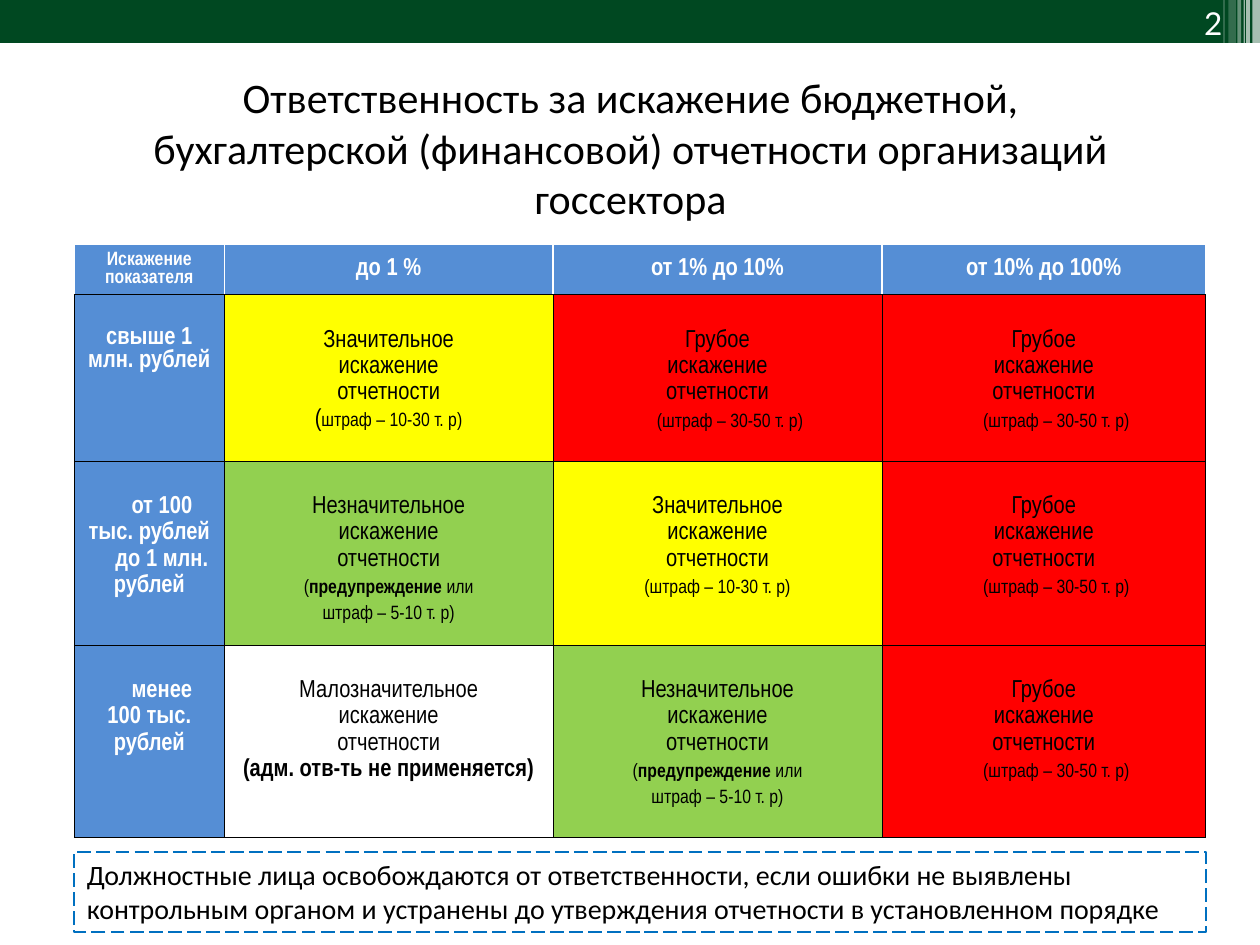
from dataclasses import dataclass

from lxml.etree import SubElement
from pptx import Presentation
from pptx.dml.color import RGBColor
from pptx.enum.dml import MSO_LINE
from pptx.enum.shapes import MSO_SHAPE
from pptx.enum.text import MSO_ANCHOR, MSO_AUTO_SIZE, PP_ALIGN
from pptx.oxml.ns import qn
from pptx.util import Inches, Pt


@dataclass(frozen=True)
class Theme:
    band: str = "004821"
    header: str = "558ED5"
    white: str = "FFFFFF"
    black: str = "000000"
    yellow: str = "FFFF00"
    red: str = "FF0000"
    green: str = "92D050"
    note_line: str = "0070C0"
    table_font: str = "Arial Narrow"
    text_font: str = "Calibri"
    number_font: str = "Lato"
    title_size: int = 24
    number_size: int = 18
    note_size: int = 16
    cell_size: int = 14
    small_size: int = 11
    cell_leading: int = 15


THEME = Theme()
BIG, SMALL = THEME.cell_size, THEME.small_size

# left, width, height, opacity in percent
STRIPES = [
    (9.94, 0.06, 0.34, 65),
    (9.89, 0.03, 0.34, 65),
    (9.87, 0.01, 0.34, 60),
    (9.82, 0.03, 0.34, 40),
    (9.75, 0.06, 0.36, 20),
    (9.71, 0.01, 0.36, 30),
]

COLUMN_WIDTHS = [1.19, 2.61, 2.61, 2.57]
ROW_HEIGHTS = [0.4, 1.32, 1.46, 1.53]
HEADERS = [["Искажение", "показателя"], ["до 1 %"], ["от 1% до 10%"], ["от 10% до 100%"]]

# Each verdict: word, fill, penalty indent, penalty lines of (text, size, bold)
GROSS = ("Грубое", THEME.red, 0.2, [[("(штраф – 30-50 т. р)", SMALL, False)]])
MAJOR = ("Значительное", THEME.yellow, 0, [[("(штраф – 10-30 т. р)", SMALL, False)]])
MAJOR_OVER_MILLION = (
    "Значительное", THEME.yellow, 0,
    [[("(", BIG, False), ("штраф – 10-30 т. р)", SMALL, False)]],
)
MINOR = (
    "Незначительное", THEME.green, 0,
    [
        [("(", SMALL, False), ("предупреждение", SMALL, True), (" или", SMALL, False)],
        [("штраф – 5-10 т. р)", SMALL, False)],
    ],
)
TRIVIAL = ("Малозначительное", THEME.white, 0, [[("(адм. отв-ть не применяется)", BIG, True)]])

# Row label lines, label indent, label leading, verdicts
ROWS = [
    (["свыше 1 млн. рублей"], 0, None, [MAJOR_OVER_MILLION, GROSS, GROSS]),
    (["от 100 тыс. рублей", "до 1 млн. рублей"], 0.2, THEME.cell_leading, [MINOR, MAJOR, GROSS]),
    (["менее 100 тыс. рублей"], 0.2, THEME.cell_leading, [TRIVIAL, MINOR, GROSS]),
]


def rgb(color):
    return RGBColor.from_string(color)


def style_font(font, name, size, color, bold=False):
    font.name = name
    font.size = Pt(size)
    font.bold = bold
    font.color.rgb = rgb(color)


def add_bar(page, left, width, height, color, opacity=100):
    bar = page.shapes.add_shape(
        MSO_SHAPE.RECTANGLE, Inches(left), 0, Inches(width), Inches(height)
    )
    bar.shadow.inherit = False
    bar.line.fill.background()
    bar.fill.solid()
    bar.fill.fore_color.rgb = rgb(color)
    if opacity < 100:
        tint = bar.fill._xPr.find(qn("a:solidFill"))[0]
        SubElement(tint, qn("a:alpha"), val=str(opacity * 1000))


def add_page_number(page):
    box = page.shapes.add_textbox(Inches(8.9), 0, Inches(0.9), Inches(0.37))
    frame = box.text_frame
    frame.word_wrap = True
    frame.vertical_anchor = MSO_ANCHOR.MIDDLE
    para = frame.paragraphs[0]
    para.text = "2"
    para.alignment = PP_ALIGN.RIGHT
    style_font(para.font, THEME.number_font, THEME.number_size, THEME.white)


def fill_title(page):
    title = page.shapes.title
    title.left, title.top = Inches(0.91), Inches(0.52)
    title.width, title.height = Inches(8.19), Inches(1.31)
    frame = title.text_frame
    frame.auto_size = MSO_AUTO_SIZE.NONE
    frame.vertical_anchor = MSO_ANCHOR.TOP
    para = frame.paragraphs[0]
    para.text = (
        "Ответственность за искажение бюджетной, бухгалтерской (финансовой) "
        "отчетности организаций госсектора"
    )
    para.alignment = PP_ALIGN.CENTER
    style_font(para.font, THEME.text_font, THEME.title_size, THEME.black)


def set_borders(cell, is_header):
    properties = cell._tc.get_or_add_tcPr()
    for side in "LRTB":
        white = is_header and side != "B"
        width = Pt(1) if white else Pt(0.5)
        line = SubElement(properties, qn(f"a:ln{side}"), w=str(width))
        paint = SubElement(line, qn("a:solidFill"))
        SubElement(paint, qn("a:srgbClr"), val=THEME.white if white else THEME.black)


def format_cell(cell, fill, is_header=False):
    """Set borders before the fill, in the order the schema requires."""
    set_borders(cell, is_header)
    cell.fill.solid()
    cell.fill.fore_color.rgb = rgb(fill)
    side, top, bottom = (0, 0, 0) if is_header else (0.1, 0.25, 0.04)
    cell.margin_left = cell.margin_right = Inches(side)
    cell.margin_top, cell.margin_bottom = Inches(top), Inches(bottom)
    cell.vertical_anchor = MSO_ANCHOR.MIDDLE if is_header else MSO_ANCHOR.TOP


def add_line(cell, index, spans, color, indent=0, leading=None):
    frame = cell.text_frame
    para = frame.add_paragraph() if index else frame.paragraphs[0]
    para.alignment = PP_ALIGN.CENTER
    if leading:
        para.line_spacing = Pt(leading)
    if indent:
        para._p.get_or_add_pPr().set("indent", str(Inches(indent)))
    for text, size, bold in spans:
        span = para.add_run()
        span.text = text
        style_font(span.font, THEME.table_font, size, color, bold)


def fill_label(cell, lines, size=BIG, indent=0, leading=None, is_header=False):
    format_cell(cell, THEME.header, is_header)
    for index, text in enumerate(lines):
        add_line(cell, index, [(text, size, True)], THEME.white, indent, leading)


def fill_verdict(cell, verdict):
    word, fill, indent, penalty = verdict
    format_cell(cell, fill)
    lines = [[(text, BIG, False)] for text in (word, "искажение", "отчетности")]
    for index, spans in enumerate(lines + penalty):
        line_indent = indent if index >= len(lines) else 0
        add_line(cell, index, spans, THEME.black, line_indent, THEME.cell_leading)


def add_penalty_table(page):
    table = page.shapes.add_table(
        len(ROW_HEIGHTS), len(COLUMN_WIDTHS), Inches(0.59), Inches(1.94),
        Inches(sum(COLUMN_WIDTHS)), Inches(sum(ROW_HEIGHTS)),
    ).table
    table.first_row = table.horz_banding = False
    for column, width in zip(table.columns, COLUMN_WIDTHS):
        column.width = Inches(width)
    for row, height in zip(table.rows, ROW_HEIGHTS):
        row.height = Inches(height)
    for column, lines in enumerate(HEADERS):
        fill_label(table.cell(0, column), lines, BIG if column else SMALL, is_header=True)
    for row, (lines, indent, leading, verdicts) in enumerate(ROWS, start=1):
        fill_label(table.cell(row, 0), lines, indent=indent, leading=leading)
        for column, verdict in enumerate(verdicts, start=1):
            fill_verdict(table.cell(row, column), verdict)


def add_note(page):
    note = page.shapes.add_shape(
        MSO_SHAPE.RECTANGLE, Inches(0.59), Inches(6.76), Inches(8.98), Inches(0.64)
    )
    note.shadow.inherit = False
    note.fill.background()
    note.line.color.rgb = rgb(THEME.note_line)
    note.line.width = Pt(1)
    note.line.dash_style = MSO_LINE.LONG_DASH
    frame = note.text_frame
    frame.word_wrap = True
    frame.vertical_anchor = MSO_ANCHOR.TOP
    para = frame.paragraphs[0]
    para.text = (
        "Должностные лица освобождаются от ответственности, если ошибки не выявлены "
        "контрольным органом и устранены до утверждения отчетности в установленном порядке"
    )
    para.alignment = PP_ALIGN.LEFT
    style_font(para.font, THEME.text_font, THEME.note_size, THEME.black)


def main():
    deck = Presentation()
    deck.slide_width, deck.slide_height = Inches(10), Inches(7.5)
    page = deck.slides.add_slide(deck.slide_layouts[5])
    add_bar(page, 0, 10, 0.34, THEME.band)
    for left, width, height, opacity in STRIPES:
        add_bar(page, left, width, height, THEME.white, opacity)
    add_page_number(page)
    add_penalty_table(page)
    fill_title(page)
    add_note(page)
    deck.save("out.pptx")


if __name__ == "__main__":
    main()
